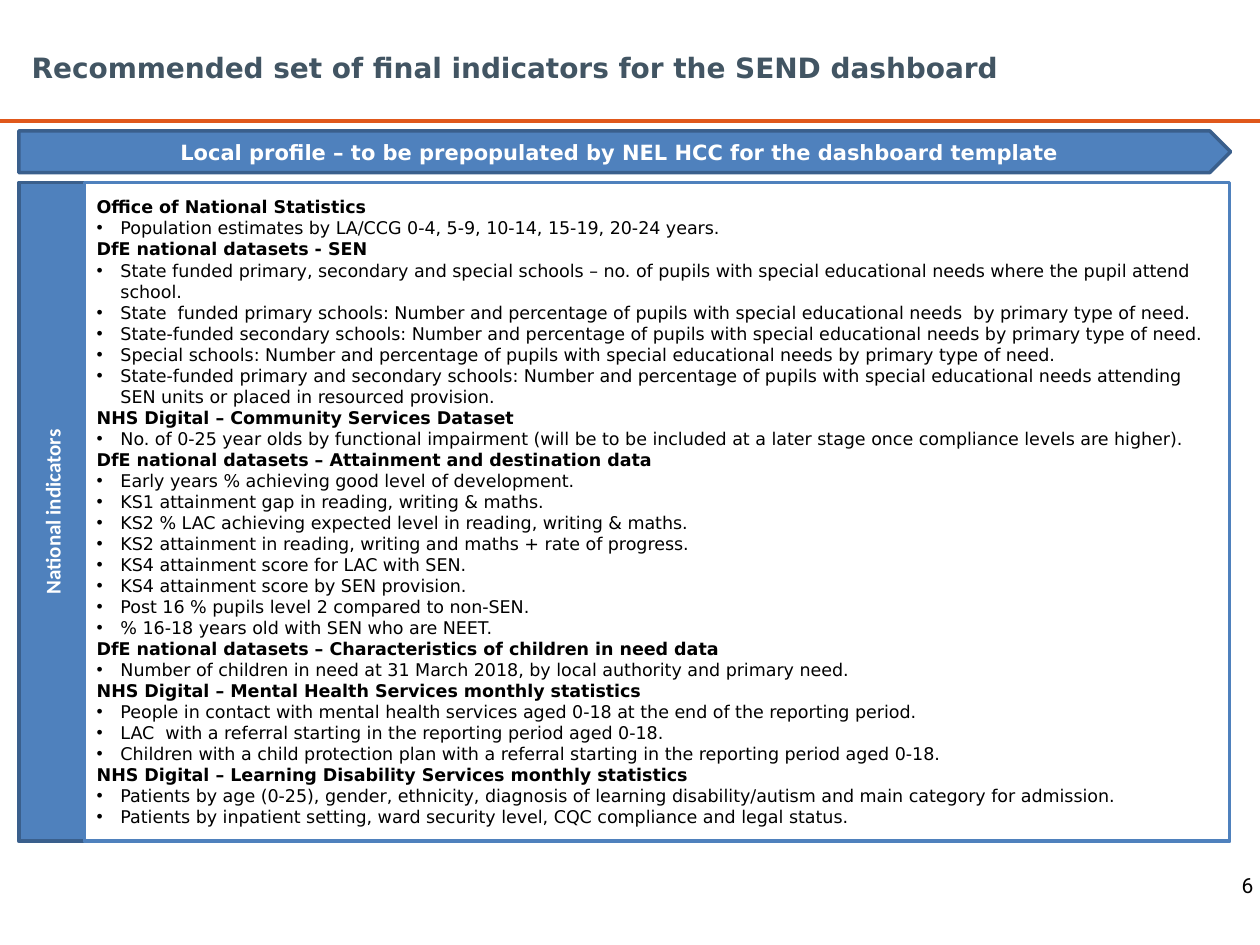
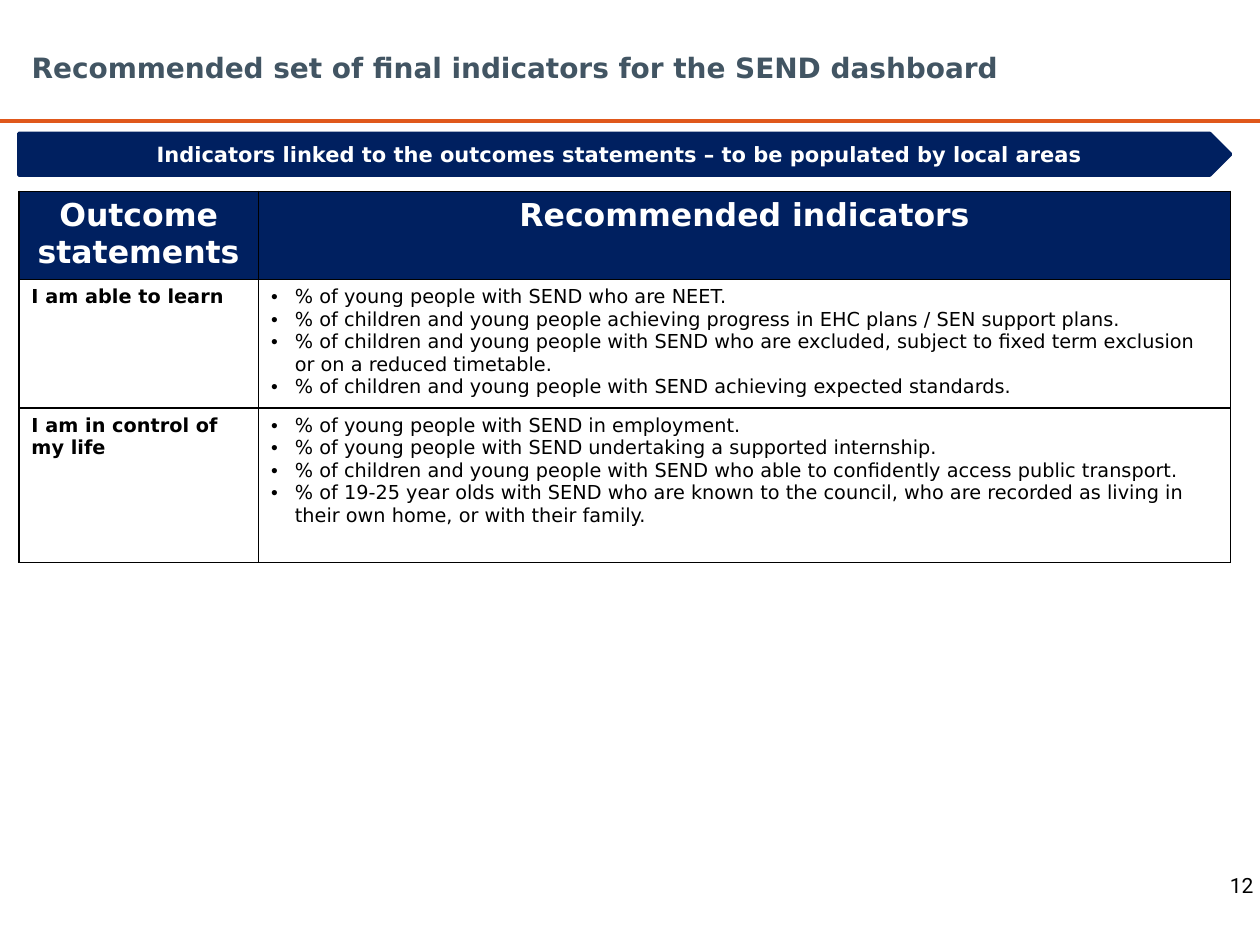
from lxml import etree
from pptx import Presentation
from pptx import util as u
from pptx.dml.color import RGBColor
from pptx.enum import shapes, text
from pptx.oxml import ns

# Shared colours and fonts
ORANGE = RGBColor(0xE0, 0x58, 0x1B)
SLATE = RGBColor(0x42, 0x55, 0x63)
BLUE = RGBColor(0x4F, 0x81, 0xBD)
DARK_BLUE = RGBColor(0x3A, 0x5F, 0x8C)
NAVY = RGBColor(0x00, 0x20, 0x60)
BLACK = RGBColor(0, 0, 0)
WHITE = RGBColor(0xFF, 0xFF, 0xFF)
BODY_FONT = "DejaVu Sans"

# Shared measures
LEFT, BAND_WIDTH, BAND_HEIGHT = u.Cm(0.38), u.Cm(24.43), u.Cm(0.84)
INDENT = u.Cm(0.48)
CENTER, RIGHT = text.PP_ALIGN.CENTER, text.PP_ALIGN.RIGHT
RECTANGLE, PENTAGON = shapes.MSO_SHAPE.RECTANGLE, shapes.MSO_SHAPE.PENTAGON


def write(frame, words, size=10, color=BLACK, bold=False, font=BODY_FONT,
          align=text.PP_ALIGN.LEFT, bullet=False):
    """Add one paragraph, using the empty first one if there is one."""
    para = frame.add_paragraph() if frame.text else frame.paragraphs[0]
    para.alignment = align
    if bullet:
        props = para._p.get_or_add_pPr()
        props.set("marL", str(INDENT))
        props.set("indent", str(-INDENT))
        etree.SubElement(props, ns.qn("a:buFont"), typeface="Arial")
        etree.SubElement(props, ns.qn("a:buChar"), char="•")
    span = para.add_run()
    span.text = words
    span.font.size = u.Pt(size)
    span.font.name = font
    span.font.bold = bold
    span.font.color.rgb = color


def add_block(page, kind, left, top, width, height, fill, line):
    """Add an outlined shape and return its text frame."""
    block = page.shapes.add_shape(kind, left, top, width, height)
    block.shadow.inherit = False
    block.fill.solid()
    block.fill.fore_color.rgb = fill
    block.line.color.rgb = line
    block.line.width = u.Pt(2)
    block.text_frame.word_wrap = True
    block.text_frame.vertical_anchor = text.MSO_ANCHOR.MIDDLE
    return block.text_frame


# Content: heading and bullets of each national source
NATIONAL_INDICATORS = [
    ("Office of National Statistics", [
        "Population estimates by LA/CCG 0-4, 5-9, 10-14, 15-19, 20-24 years.",
    ]),
    ("DfE national datasets - SEN", [
        "State funded primary, secondary and special schools – no. of pupils with special "
        "educational needs where the pupil attend school.",
        "State  funded primary schools: Number and percentage of pupils with special "
        "educational needs  by primary type of need.",
        "State-funded secondary schools: Number and percentage of pupils with special "
        "educational needs by primary type of need.",
        "Special schools: Number and percentage of pupils with special educational needs "
        "by primary type of need.",
        "State-funded primary and secondary schools: Number and percentage of pupils with "
        "special educational needs attending SEN units or placed in resourced provision.",
    ]),
    ("NHS Digital – Community Services Dataset", [
        "No. of 0-25 year olds by functional impairment (will be to be included at a later "
        "stage once compliance levels are higher).",
    ]),
    ("DfE national datasets – Attainment and destination data", [
        "Early years % achieving good level of development.",
        "KS1 attainment gap in reading, writing & maths.",
        "KS2 % LAC achieving expected level in reading, writing & maths.",
        "KS2 attainment in reading, writing and maths + rate of progress.",
        "KS4 attainment score for LAC with SEN.",
        "KS4 attainment score by SEN provision.",
        "Post 16 % pupils level 2 compared to non-SEN.",
        "% 16-18 years old with SEN who are NEET.",
    ]),
    ("DfE national datasets – Characteristics of children in need data", [
        "Number of children in need at 31 March 2018, by local authority and primary need.",
    ]),
    ("NHS Digital – Mental Health Services monthly statistics", [
        "People in contact with mental health services aged 0-18 at the end of the "
        "reporting period.",
        "LAC  with a referral starting in the reporting period aged 0-18.",
        "Children with a child protection plan with a referral starting in the reporting "
        "period aged 0-18.",
    ]),
    ("NHS Digital – Learning Disability Services monthly statistics", [
        "Patients by age (0-25), gender, ethnicity, diagnosis of learning "
        "disability/autism and main category for admission.",
        "Patients by inpatient setting, ward security level, CQC compliance and legal status.",
    ]),
]

# Content: outcome statement and its indicators
OUTCOMES = [
    ("I am able to learn", [
        "% of young people with SEND who are NEET.",
        "% of children and young people achieving progress in EHC plans / SEN support plans.",
        "% of children and young people with SEND who are excluded, subject to fixed term "
        "exclusion or on a reduced timetable.",
        "% of children and young people with SEND achieving expected standards.",
    ]),
    ("I am in control of my life", [
        "% of young people with SEND in employment.",
        "% of young people with SEND undertaking a supported internship.",
        "% of children and young people with SEND who able to confidently access public "
        "transport.",
        "% of 19-25 year olds with SEND who are known to the council, who are recorded as "
        "living in their own home, or with their family.",
    ]),
]

# Page number, band wording, band top, band fill, band line
PAGES = [
    ("6", "Local profile – to be prepopulated by NEL HCC for the dashboard template",
     u.Cm(2.64), BLUE, DARK_BLUE),
    ("12", "Indicators linked to the outcomes statements – to be populated by local areas",
     u.Cm(2.69), NAVY, NAVY),
]

deck = Presentation()
deck.slide_width, deck.slide_height = u.Cm(25.4), u.Cm(19.05)

# Rule, title, page number and band on every page
for number, band_words, band_top, fill, line in PAGES:
    page = deck.slides.add_slide(deck.slide_layouts[6])
    rule = page.shapes.add_connector(shapes.MSO_CONNECTOR.STRAIGHT,
                                     0, u.Cm(2.44), deck.slide_width, u.Cm(2.44))
    rule.line.color.rgb = ORANGE
    rule.line.width = u.Pt(2)
    etree.SubElement(rule._element.spPr, ns.qn("a:effectLst"))

    title = page.shapes.add_textbox(u.Cm(0.64), u.Cm(0.64), u.Cm(23.62), u.Cm(1.45))
    number_box = page.shapes.add_textbox(u.Cm(24.26), u.Cm(17.4), u.Cm(1.14), u.Cm(0.89))
    for box, inset in ((title, 0), (number_box, u.Cm(0.13))):
        frame = box.text_frame
        frame.word_wrap = True
        frame.vertical_anchor = text.MSO_ANCHOR.MIDDLE
        frame.margin_left = frame.margin_right = inset
        frame.margin_top = frame.margin_bottom = inset
    write(title.text_frame, "Recommended set of final indicators for the SEND dashboard",
          size=16, color=SLATE, bold=True)
    write(number_box.text_frame, number, size=12, font="Roboto", align=RIGHT)

    band = add_block(page, PENTAGON, LEFT, band_top, BAND_WIDTH, BAND_HEIGHT, fill, line)
    write(band, band_words, size=12, color=WHITE, bold=True, align=CENTER)

profile_page, outcomes_page = deck.slides

# National indicators: side label and list
PANEL_TOP, PANEL_HEIGHT = u.Cm(3.68), u.Cm(13.28)
side_label = add_block(profile_page, RECTANGLE, LEFT, PANEL_TOP, u.Cm(1.35), PANEL_HEIGHT,
                       BLUE, DARK_BLUE)
side_label._txBody.bodyPr.set("vert", "vert270")
write(side_label, "National indicators", size=12, color=WHITE, bold=True,
      font="Calibri", align=CENTER)

panel = add_block(profile_page, RECTANGLE, u.Cm(1.7), PANEL_TOP, u.Cm(23.09), PANEL_HEIGHT,
                  WHITE, BLUE)
for heading, indicators in NATIONAL_INDICATORS:
    write(panel, heading, bold=True)
    for indicator in indicators:
        write(panel, indicator, bullet=True)

# Outcomes table
column_widths = [u.Cm(4.83), u.Cm(19.6)]
row_heights = [u.Cm(1.14), u.Cm(2.34), u.Cm(3.12)]
table = outcomes_page.shapes.add_table(len(row_heights), len(column_widths), LEFT, u.Cm(3.86),
                                       BAND_WIDTH, sum(row_heights)).table
table.horz_banding = False
for column, width in zip(table.columns, column_widths):
    column.width = width
for row, height in zip(table.rows, row_heights):
    row.height = height

# Cell borders and fills
for cell in table.iter_cells():
    cell_props = cell._tc.get_or_add_tcPr()
    for side in ("a:lnL", "a:lnR", "a:lnT", "a:lnB"):
        border = etree.SubElement(cell_props, ns.qn(side), w=str(u.Pt(1)))
        border_fill = etree.SubElement(border, ns.qn("a:solidFill"))
        etree.SubElement(border_fill, ns.qn("a:srgbClr"), val=str(BLACK))
    cell.fill.background()

# Cell wording
for column, heading in enumerate(("Outcome statements", "Recommended indicators")):
    header = table.cell(0, column)
    header.fill.solid()
    header.fill.fore_color.rgb = NAVY
    write(header.text_frame, heading, size=18, color=WHITE, bold=True, align=CENTER)
for row, (statement, indicators) in enumerate(OUTCOMES, start=1):
    write(table.cell(row, 0).text_frame, statement, size=11, bold=True)
    for indicator in indicators:
        write(table.cell(row, 1).text_frame, indicator, size=11, bullet=True)

deck.save("out.pptx")
